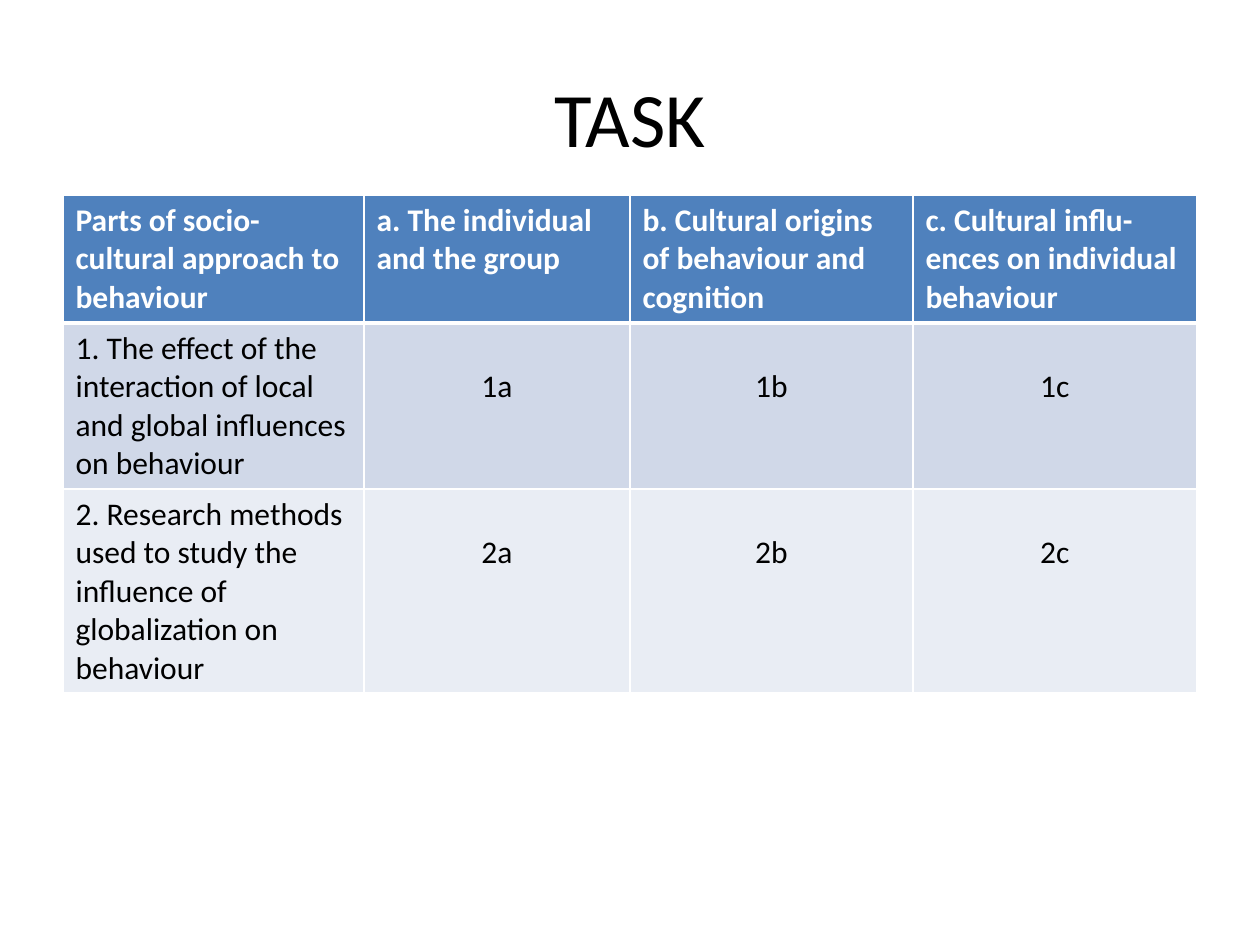
"""Build the TASK slide: a title above a grid of task parts."""
from lxml import etree
from pptx import Presentation
from pptx import util as u
from pptx.dml.color import RGBColor
from pptx.enum import text
from pptx.oxml import ns

TITLE = "TASK"
ROWS = [
    ["Parts of socio-cultural approach to behaviour", "a. The individual and the group",
     "b. Cultural origins of behaviour and cognition",
     "c. Cultural influ-ences on individual behaviour"],
    ["1. The effect of the interaction of local and global influences on behaviour",
     "1a", "1b", "1c"],
    ["2. Research methods used to study the influence of globalization on behaviour",
     "2a", "2b", "2c"],
]
COLORS = {"white": "FFFFFF", "black": "000000", "header": "4F81BD",
          "band1": "D0D8E8", "band2": "E9EDF4"}
FILLS = ["header", "band1", "band2"]
COL_WIDTHS = [301, 266, 283, 284]
ROW_HEIGHTS = [128, 166, 204]
LEFT, TITLE_TOP, TABLE_TOP, TITLE_HEIGHT = 63, 38, 195, 157
LABEL_TOP = 45
FONT = "Calibri"
PX = 914400 // 126


def px(n):
    return u.Emu(n * PX)


def color(name):
    return RGBColor.from_string(COLORS[name])


def write(tf, content, size=18, ink="black", bold=False, center=False):
    tf.word_wrap = True
    p = tf.paragraphs[0]
    p.alignment = text.PP_ALIGN.CENTER if center else text.PP_ALIGN.LEFT
    r = p.add_run()
    r.text = content
    r.font.name, r.font.size, r.font.bold = FONT, u.Pt(size), bold
    r.font.color.rgb = color(ink)


def set_borders(cell, **widths):
    tc_pr = cell._tc.get_or_add_tcPr()
    for i, side in enumerate("LRTB"):
        ln = etree.Element(ns.qn(f"a:ln{side}"), w=str(u.Pt(widths.get(side, 1))))
        fill = etree.SubElement(ln, ns.qn("a:solidFill"))
        etree.SubElement(fill, ns.qn("a:srgbClr"), val=COLORS["white"])
        tc_pr.insert(i, ln)


def main():
    prs = Presentation()
    prs.slide_width, prs.slide_height = px(1260), px(945)
    s = prs.slides.add_slide(prs.slide_layouts[6])
    width = sum(COL_WIDTHS)

    title = s.shapes.add_textbox(px(LEFT), px(TITLE_TOP), px(width), px(TITLE_HEIGHT))
    title.text_frame.vertical_anchor = text.MSO_ANCHOR.MIDDLE
    write(title.text_frame, TITLE, size=44, center=True)

    table = s.shapes.add_table(len(ROWS), len(COL_WIDTHS), px(LEFT), px(TABLE_TOP),
                               px(width), px(sum(ROW_HEIGHTS))).table
    for col, w in zip(table.columns, COL_WIDTHS):
        col.width = px(w)
    for row, h in zip(table.rows, ROW_HEIGHTS):
        row.height = px(h)

    for i, row in enumerate(ROWS):
        for j, content in enumerate(row):
            cell = table.cell(i, j)
            header, label = i == 0, i > 0 and j > 0
            cell.fill.solid()
            cell.fill.fore_color.rgb = color(FILLS[i])
            if label:
                cell.margin_top = px(LABEL_TOP)
            set_borders(cell, T=3 if i == 1 else 1, B=3 if header else 1)
            write(cell.text_frame, content, ink="white" if header else "black",
                  bold=header, center=label)

    prs.save("out.pptx")


if __name__ == "__main__":
    main()
